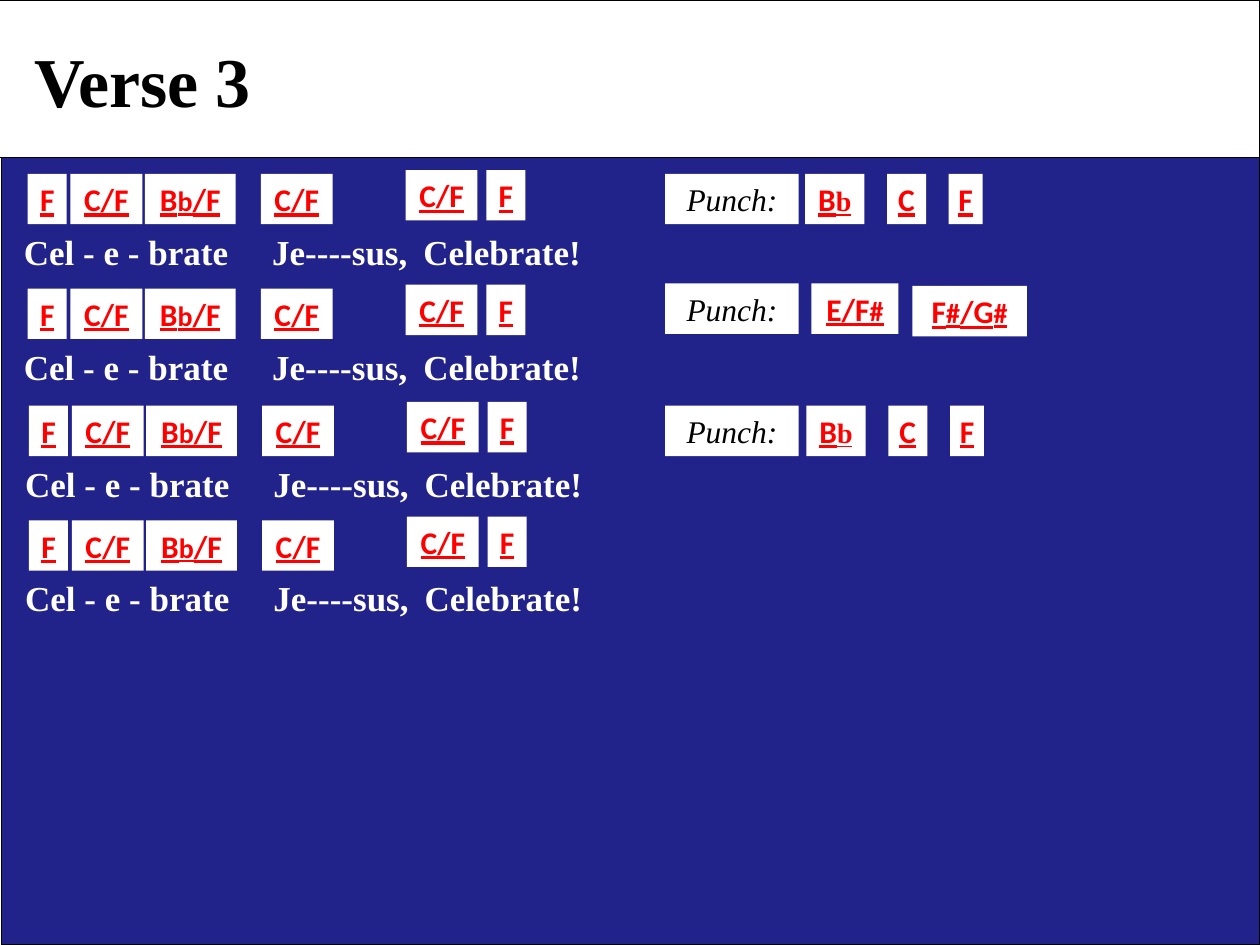
"""Build the Verse 3 lyric slide with its chord and punch tiles."""
from itertools import groupby

from lxml import etree
from pptx import Presentation
from pptx.dml.color import RGBColor
from pptx.enum.shapes import MSO_SHAPE
from pptx.enum.text import MSO_ANCHOR, PP_ALIGN
from pptx.oxml.ns import qn
from pptx.util import Inches, Pt

RECT = MSO_SHAPE.RECTANGLE
TOP, MIDDLE = MSO_ANCHOR.TOP, MSO_ANCHOR.MIDDLE
LEFT, CENTER = PP_ALIGN.LEFT, PP_ALIGN.CENTER

NAVY = RGBColor(0x22, 0x22, 0x8B)
WHITE = RGBColor(0xFF, 0xFF, 0xFF)
BLACK = RGBColor(0x00, 0x00, 0x00)
RED = RGBColor(0xFF, 0x00, 0x00)

SERIF, SANS = "Times New Roman", "Calibri"
TITLE = {"name": SERIF, "size": Pt(40), "bold": True}
LYRIC = {"name": SERIF, "size": Pt(20), "bold": True}
PUNCH = {"name": SERIF, "size": Pt(18), "bold": False, "italic": True}
CHORD = {"name": SANS, "size": Pt(18), "bold": True, "underline": True}

TILE_H = 0.4
LINE = "Cel - e - brate\tJe----sus,\tCelebrate!"
LYRIC_TABS = (1.97, 3.17)
ROWS = ((0, 1.38), (0, 2.29), (0.01, 3.22), (0.01, 4.13))
VERSE_CHORDS = (
    ("F", 0.22, 0, 0.31),
    ("C/F", 0.56, 0, 0.57),
    ("Bb/F", 1.15, 0, 0.72),
    ("C/F", 2.07, 0, 0.57),
    ("C/F", 3.22, -0.03, 0.57),
    ("F", 3.86, -0.03, 0.31),
)
MAIN_PUNCH = (("Bb", 6.39, 0, 0.47), ("C", 7.04, 0, 0.31), ("F", 7.53, 0, 0.27))
TURN_PUNCH = (("E/F#", 6.44, -0.04, 0.69), ("F#/G#", 7.24, -0.02, 0.91))
PUNCHES = ((0, MAIN_PUNCH), (-0.04, TURN_PUNCH), (0, MAIN_PUNCH))


class SongSlide:
    """Hold the style and the current slide."""

    def __init__(self, prs):
        self.s = prs.slides.add_slide(prs.slide_layouts[5])

    def run(self, p, text, fmt, color):
        r = p.add_run()
        r.text = text
        for name, value in fmt.items():
            setattr(r.font, name, value)
        r.font.color.rgb = color

    def rect(self, x, y, w, h, fill, line=None):
        sp = self.s.shapes.add_shape(RECT, Inches(x), Inches(y), Inches(w), Inches(h))
        sp.shadow.inherit = False
        sp.fill.solid()
        sp.fill.fore_color.rgb = fill
        if line is None:
            sp.line.fill.background()
        else:
            sp.line.color.rgb = line
            sp.line.width = Pt(0.75)
        return sp

    def panel(self, x, y, w, h, fill):
        sp = self.rect(x, y, w, h, fill, BLACK)
        self.s.shapes.title.element.addprevious(sp.element)

    def title(self, text, x, y, w, h):
        sp = self.s.shapes.title
        sp.left, sp.top, sp.width, sp.height = map(Inches, (x, y, w, h))
        sp.fill.solid()
        sp.fill.fore_color.rgb = WHITE
        sp.text_frame.vertical_anchor = TOP
        p = sp.text_frame.paragraphs[0]
        p.alignment = LEFT
        self.run(p, text, TITLE, BLACK)

    def tile(self, x, y, w):
        tf = self.rect(x, y, w, TILE_H, WHITE).text_frame
        tf.word_wrap = False
        tf.vertical_anchor = MIDDLE
        p = tf.paragraphs[0]
        p.alignment = CENTER
        return p

    def chord(self, text, x, y, w):
        p = self.tile(x, y, w)
        flat_font = SERIF if text == "Bb" else SANS
        for small, chars in groupby(text, lambda c: c in "b#"):
            change = {"name": flat_font, "size": Pt(16)} if small else {}
            self.run(p, "".join(chars), {**CHORD, **change}, RED)

    def chords(self, group, dx, y):
        for text, x, dy, w in group:
            self.chord(text, x + dx, y + dy, w)

    def punch(self, x, y):
        self.run(self.tile(x, y, 1.06), "Punch:", PUNCH, BLACK)

    def lyric(self, x, y):
        sp = self.s.shapes.add_textbox(Inches(x), Inches(y), Inches(10), Inches(0.44))
        tf = sp.text_frame
        tf.word_wrap = True
        tf.margin_left = Inches(0.17)
        p = tf.paragraphs[0]
        self.run(p, LINE, LYRIC, WHITE)
        tabs = etree.SubElement(p._p.get_or_add_pPr(), qn("a:tabLst"))
        for pos in LYRIC_TABS:
            etree.SubElement(tabs, qn("a:tab"), pos=str(Inches(pos)), algn="l")


def main():
    prs = Presentation()
    prs.slide_width, prs.slide_height = Inches(10), Inches(7.5)
    song = SongSlide(prs)
    song.panel(0.01, 1.25, 9.99, 6.25, NAVY)
    song.panel(-0.01, 0, 10.01, 1.25, WHITE)
    song.title("Verse 3", 0.17, 0.25, 3.33, 0.77)
    for dx, y in ROWS:
        song.lyric(0.02 + dx, y + TILE_H)
        song.chords(VERSE_CHORDS, dx, y)
    for (dx, y), (dy, group) in zip(ROWS, PUNCHES):
        song.chords(group, dx, y)
        song.punch(5.28, y + dy)
    prs.save("out.pptx")


if __name__ == "__main__":
    main()
